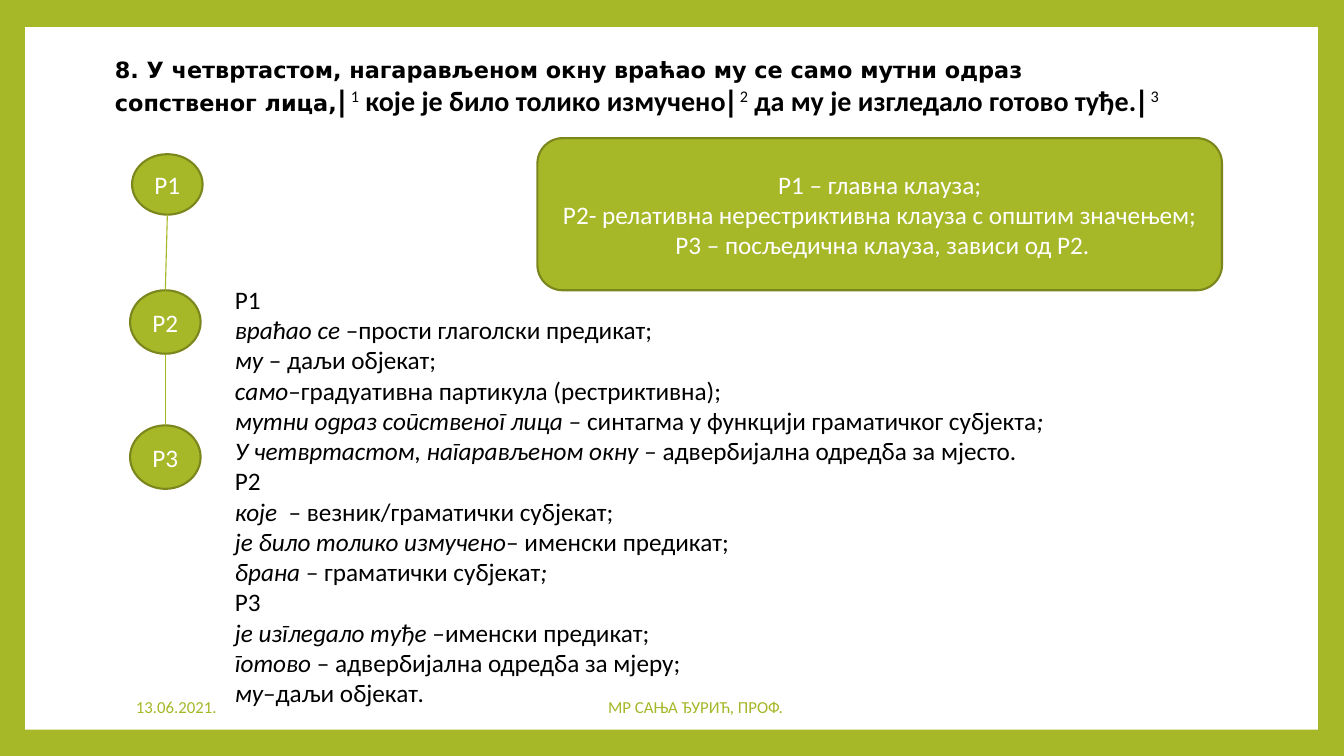
from lxml import etree
from pptx import Presentation
from pptx import util as u
from pptx.dml.color import RGBColor
from pptx.enum import shapes, text
from pptx.oxml.ns import qn

GREEN, EDGE, WHITE, BLACK = "A6B727", "7B871D", "FFFFFF", "000000"
SANS, WIDE = "Calibri", "DejaVu Sans"
KIND = shapes.MSO_SHAPE
LEFT, MID = text.PP_ALIGN.LEFT, text.PP_ALIGN.CENTER


def paint(color, code):
    color.rgb = RGBColor.from_string(code)


class Deck:
    def __init__(self):
        self.prs = Presentation()
        self.prs.slide_width = u.Inches(13.33)
        self.prs.slide_height = u.Inches(7.5)
        self.slide = self.prs.slides.add_slide(self.prs.slide_layouts[1])
        self.items = self.slide.shapes

    def ground(self, code):
        fill = self.slide.background.fill
        fill.solid()
        paint(fill.fore_color, code)

    def run(self, para, words, size=18, code=BLACK, face=SANS,
            bold=False, slant=False, raised=False):
        run = para.add_run()
        run.text = words
        font = run.font
        font.size, font.name = u.Pt(size), face
        font.bold, font.italic = bold, slant
        paint(font.color, code)
        props = run._r.get_or_add_rPr()
        props.set("lang", "sr-Cyrl-BA")
        if raised:
            props.set("baseline", "30000")

    def fill_text(self, shape, rows, align=LEFT,
                  anchor=text.MSO_ANCHOR.MIDDLE):
        """Fill a shape with rows, each a list of (words, style) runs."""
        frame = shape.text_frame
        frame.word_wrap = True
        frame.auto_size = text.MSO_AUTO_SIZE.NONE
        frame.vertical_anchor = anchor
        for i, row in enumerate(rows):
            para = frame.add_paragraph() if i else frame.paragraphs[0]
            para.alignment = align
            para.space_before = u.Pt(0)
            for words, style in row:
                self.run(para, words, **style)

    def holder(self, index, box, rows):
        """Move a template placeholder and fill it with plain rows."""
        shape = self.slide.placeholders[index]
        shape.left, shape.top, shape.width, shape.height = map(u.Inches, box)
        self.fill_text(shape, rows, anchor=text.MSO_ANCHOR.TOP)
        for para in shape.text_frame.paragraphs:
            props = para._p.get_or_add_pPr()
            props.set("marL", "0")
            props.set("indent", "0")
            etree.SubElement(props, qn("a:buNone"))

    def label(self, box, words, align):
        shape = self.items.add_textbox(*map(u.Inches, box))
        self.fill_text(shape, [[(words, dict(size=12, code=GREEN))]], align)

    def shape(self, kind, box, rows):
        shape = self.items.add_shape(kind, *map(u.Inches, box))
        shape.shadow.inherit = False
        shape.fill.solid()
        paint(shape.fill.fore_color, GREEN)
        paint(shape.line.color, EDGE)
        shape.line.width = u.Pt(1.5)
        self.fill_text(shape, [[(row, dict(code=WHITE))] for row in rows], MID)

    def panel(self, box):
        """Lay a white sheet behind everything else."""
        shape = self.items.add_shape(KIND.RECTANGLE, *map(u.Inches, box))
        shape.shadow.inherit = False
        shape.fill.solid()
        paint(shape.fill.fore_color, WHITE)
        shape.line.fill.background()
        self.items._spTree.insert(2, shape._element)

    def line(self, *ends):
        line = self.items.add_connector(
            shapes.MSO_CONNECTOR.STRAIGHT, *map(u.Inches, ends))
        paint(line.line.color, GREEN)
        line.line.width = u.Pt(0.79)
        etree.SubElement(line._element.spPr, qn("a:effectLst"))


# Each row alternates italic and upright text, starting with italic.
NOTES = [
    ("", "Р1"),
    ("враћао се", " –прости глаголски предикат;"),
    ("му ", "– даљи објекат;"),
    ("само", "–градуативна партикула (рестриктивна);"),
    ("мутни одраз сопственог лица – ",
     "синтагма у функцији граматичког субјекта", ";"),
    ("У четвртастом, нагарављеном окну – ",
     "адвербијална одредба за мјесто", "."),
    ("", "Р2"),
    ("које", "  – везник/граматички субјекат;"),
    ("је било толико измучено", "– именски предикат;"),
    ("брана – ", "граматички субјекат", ";"),
    ("", "Р3"),
    ("је изгледало туђе", " –именски предикат;"),
    ("готово ", "– адвербијална одредба за мјеру;"),
    ("му", "–даљи објекат", "."),
]
CLAUSES = [
    ("8. У четвртастом, нагарављеном окну враћао му се само мутни одраз "
     "сопственог лица,", dict(size=16, face=WIDE)),
    (" које је било толико измучено", dict(size=20)),
    (" да му је изгледало готово туђе.", dict(size=20)),
]
RULES = [
    "Р1 – главна клауза;",
    "Р2- релативна нерестриктивна клауза с општим значењем;",
    " Р3 – посљедична клауза, зависи од Р2.",
]
NODES = [(1.31, 1.53, 0.7, 0.6), (1.29, 2.88, 0.7, 0.63),
         (1.29, 4.22, 0.7, 0.63)]


def main():
    deck = Deck()
    deck.ground(GREEN)
    deck.panel((0.25, 0.27, 12.82, 6.97))

    title = []
    for num, (words, style) in enumerate(CLAUSES, 1):
        title += [(words, dict(style, bold=True)),
                  ("|", dict(size=20, face=WIDE, bold=True)),
                  (f" {num}", dict(size=20, raised=True))]
    deck.holder(0, (1.04, 0.51, 10.65, 1.04), [title])

    notes = [[(part, dict(slant=i % 2 == 0))
              for i, part in enumerate(row) if part] for row in NOTES]
    deck.holder(1, (2.23, 2.77, 9.13, 4.95), notes)

    for num, box in enumerate(NODES, 1):
        deck.shape(KIND.OVAL, box, [f"Р{num}"])
    for (x, y, w, h), (left, top, wide, _) in zip(NODES, NODES[1:]):
        deck.line(x + w / 2, y + h, left + wide / 2, top)
    deck.shape(KIND.ROUNDED_RECTANGLE, (5.33, 1.37, 6.79, 1.51), RULES)

    deck.label((1.25, 6.81, 2.55, 0.4), "13.06.2021.", LEFT)
    deck.label((4.32, 6.81, 5.16, 0.4), "МР САЊА ЂУРИЋ, ПРОФ.", MID)
    deck.prs.save("out.pptx")


if __name__ == "__main__":
    main()
